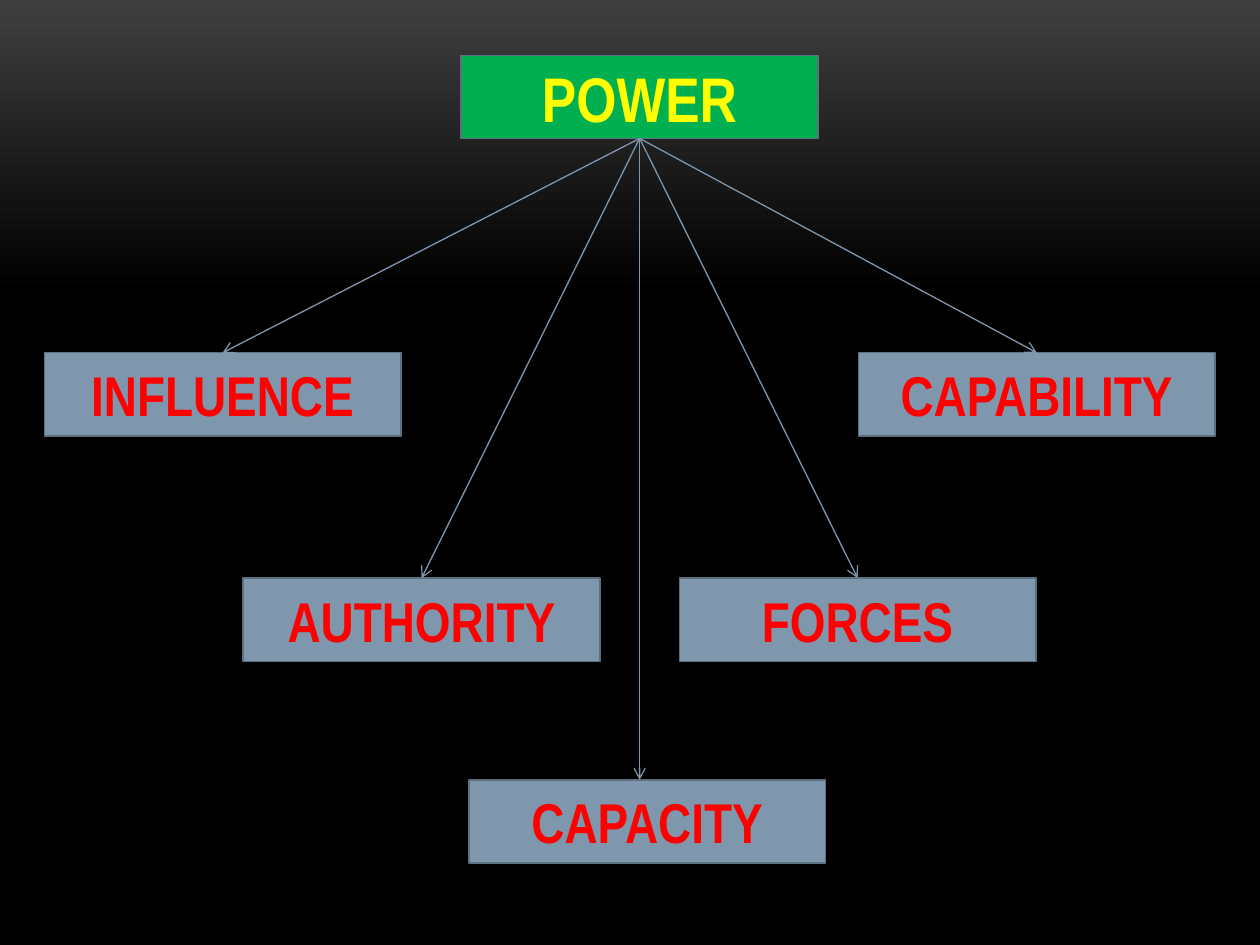
from copy import deepcopy
from dataclasses import dataclass

from pptx import Presentation
from pptx.dml.color import RGBColor
from pptx.enum.shapes import MSO_CONNECTOR as Connector, MSO_SHAPE as Shape
from pptx.enum.text import MSO_ANCHOR as Anchor, PP_ALIGN as Align
from pptx.oxml.ns import qn
from pptx.oxml.xmlchemy import OxmlElement
from pptx.shapes.autoshape import Shape as AutoShape
from pptx.slide import Slide
from pptx.util import Pt

BOX_WIDTH, BOX_HEIGHT = 203.8, 47.5
STEEL, STEEL_DARK = "7E97AD", "5D7080"
BOTTOM, TOP = 2, 0


@dataclass
class Box:
    text: str
    left: float
    top: float
    fill: str = STEEL
    font_color: str = "FF0000"
    font_size: float = 32
    joined: bool = True


ROOT = Box("POWER", 263.6, 31.6, "00B050", "FFFF00", 36)
BRANCHES = [
    Box("INFLUENCE", 25.3, 201.6),
    Box("CAPABILITY", 490.6, 201.6),
    Box("AUTHORITY", 139, 330.4),
    Box("FORCES", 388.2, 330.4),
    Box("CAPACITY", 268, 445.6, joined=False),
]


def color(value: str) -> RGBColor:
    return RGBColor.from_string(value)


def write_text(shape: AutoShape, text: str, *, size: float, font_color: str,
               font_name: str = "Arial Narrow", bold: bool = True) -> None:
    frame = shape.text_frame
    frame.word_wrap = True
    frame.vertical_anchor = Anchor.MIDDLE
    paragraph = frame.paragraphs[0]
    paragraph.alignment = Align.CENTER
    run = paragraph.add_run()
    run.text = text
    run.font.name = font_name
    run.font.size = Pt(size)
    run.font.bold = bold
    run.font.color.rgb = color(font_color)


def draw_box(slide: Slide, box: Box) -> AutoShape:
    shape = slide.shapes.add_shape(
        Shape.RECTANGLE, Pt(box.left), Pt(box.top), Pt(BOX_WIDTH), Pt(BOX_HEIGHT))
    shape.shadow.inherit = False
    shape.fill.solid()
    shape.fill.fore_color.rgb = color(box.fill)
    shape.line.color.rgb = color(STEEL_DARK)
    shape.line.width = Pt(0.85)
    write_text(shape, box.text, size=box.font_size, font_color=box.font_color)
    return shape


def draw_arrow(slide: Slide, root: AutoShape, branch: AutoShape, joined: bool) -> None:
    start = root.left + root.width // 2
    connector = slide.shapes.add_connector(
        Connector.STRAIGHT, start, root.top + root.height, start, branch.top)
    connector.begin_connect(root, BOTTOM)
    if joined:
        connector.end_connect(branch, TOP)
    connector.line.color.rgb = color(STEEL)
    connector.line.width = Pt(0.75)
    arrowhead = OxmlElement("a:tailEnd")
    arrowhead.set("type", "arrow")
    connector.line._get_or_add_ln().append(arrowhead)
    connector._element.spPr.append(OxmlElement("a:effectLst"))


def paint_background(slide: Slide) -> None:
    fill = slide.background.fill
    fill.gradient()
    fill.gradient_angle = 270
    stop_list = slide.element.find(".//" + qn("a:gsLst"))
    stop_list.append(deepcopy(stop_list[-1]))
    stops = [(0, "3F3F3F"), (0.31, "000000"), (1, "000000")]
    for stop, (position, value) in zip(fill.gradient_stops, stops):
        stop.position = position
        stop.color.rgb = color(value)


def main() -> None:
    presentation = Presentation()
    presentation.slide_width, presentation.slide_height = Pt(720), Pt(540)
    slide = presentation.slides.add_slide(presentation.slide_layouts[6])
    paint_background(slide)
    root = draw_box(slide, ROOT)
    for box in BRANCHES:
        draw_arrow(slide, root, draw_box(slide, box), box.joined)
    presentation.save("out.pptx")


if __name__ == "__main__":
    main()
